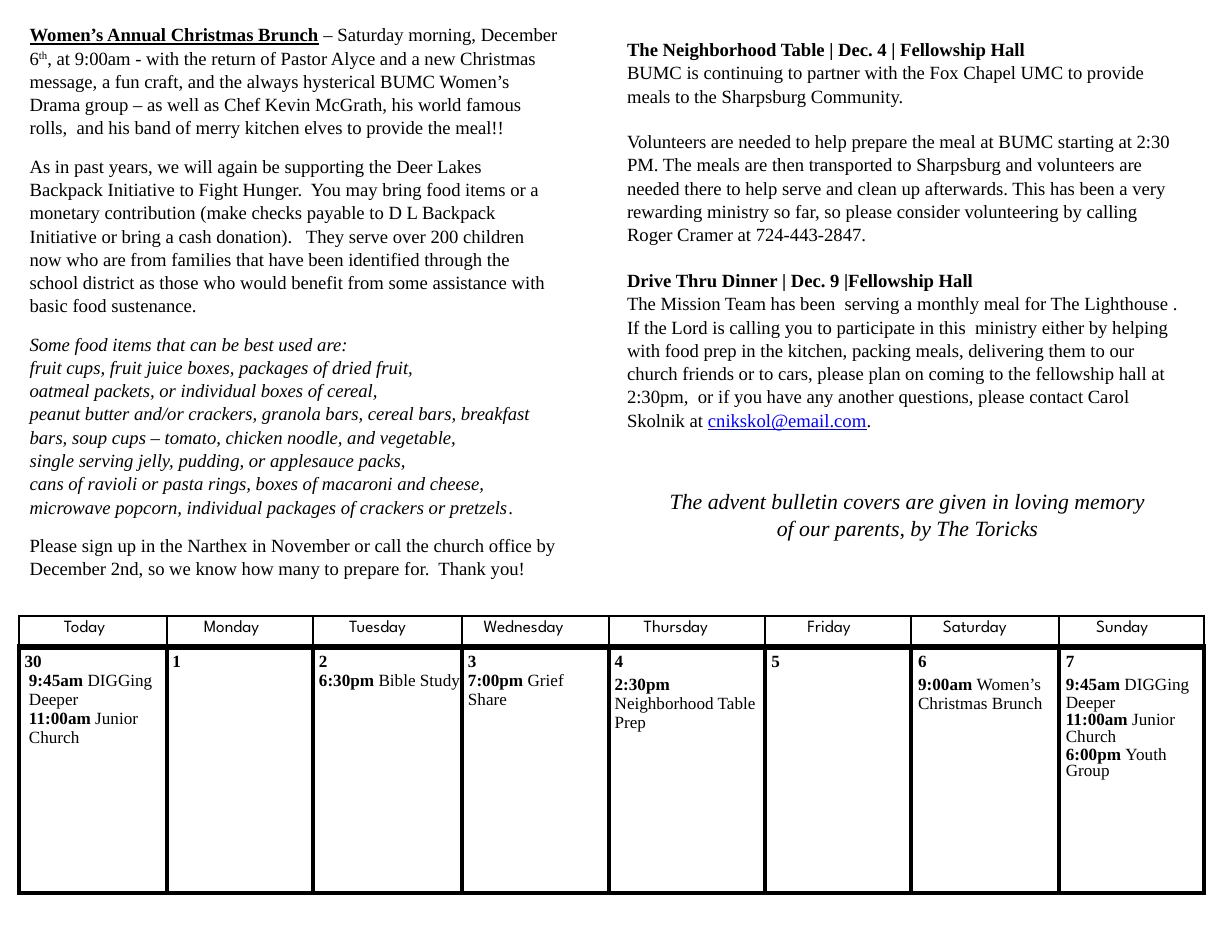
from dataclasses import dataclass

from lxml import etree
from pptx import Presentation
from pptx.dml.color import RGBColor
from pptx.enum.text import MSO_ANCHOR, PP_ALIGN
from pptx.oxml.ns import qn
from pptx.util import Pt

CENTER = PP_ALIGN.CENTER
LEFT = PP_ALIGN.LEFT
TOP = MSO_ANCHOR.TOP


@dataclass(frozen=True)
class Theme:
    ink: str = "000000"
    link: str = "0000FF"
    body_font: str = "Times New Roman"
    header_font: str = "League Spartan"
    body_size: float = 12
    dedication_size: float = 14
    calendar_size: float = 11
    line_spacing: float = 1.04
    thin: float = 1.5
    medium: float = 3
    thick: float = 4.25


THEME = Theme()
BOLD = {"bold": True}
ITALIC = {"italic": True}
HEADING = {"bold": True, "underline": True}
LINK = {"color": THEME.link, "underline": True}
SUPERSCRIPT = {"baseline": 30000}
DEDICATION = {"italic": True, "size": Pt(THEME.dedication_size)}
AFTER_SMALL_GAP = {"space_before": Pt(9.6)}
AFTER_LINE = {"space_before": Pt(14.4)}
TIGHT = {"line_spacing": 0.88}
TIGHT_START = {"line_spacing": 0.88, "space_before": Pt(0.8)}
ENTRY = {"space_before": Pt(2.6)}


class Page:
    def __init__(self, slide, theme):
        self.slide = slide
        self.theme = theme

    def add_run(self, paragraph, text, formats):
        run = paragraph.add_run()
        run.text = text
        values = {"name": self.theme.body_font, "size": Pt(self.theme.body_size),
                  "bold": False, "italic": False, **formats}
        color = values.pop("color", self.theme.ink)
        baseline = values.pop("baseline", None)
        for name, value in values.items():
            setattr(run.font, name, value)
        run.font.color.rgb = RGBColor.from_string(color)
        if baseline:
            run._r.get_or_add_rPr().set("baseline", str(baseline))

    def fill_text(self, text_frame, paragraphs, base=None, layout=None):
        for index, (runs, own_layout) in enumerate(paragraphs):
            paragraph = text_frame.paragraphs[0] if index == 0 else text_frame.add_paragraph()
            values = {"alignment": LEFT, "space_before": Pt(0), **(layout or {}), **own_layout}
            indent = values.pop("indent", 0)
            for name, value in values.items():
                setattr(paragraph, name, value)
            paragraph._p.get_or_add_pPr().set("marL", str(Pt(indent)))
            for text, formats in runs:
                self.add_run(paragraph, text, {**(base or {}), **formats})

    def text_box(self, left, top, width, height, paragraphs):
        shape = self.slide.shapes.add_textbox(Pt(left), Pt(top), Pt(width), Pt(height))
        shape.text_frame.word_wrap = True
        self.fill_text(shape.text_frame, paragraphs,
                       layout={"line_spacing": self.theme.line_spacing})

    def border(self, cell, widths):
        properties = cell._tc.get_or_add_tcPr()
        for side, width in zip(("lnL", "lnR", "lnT", "lnB"), widths):
            line = etree.SubElement(properties, qn(f"a:{side}"), w=str(Pt(width)))
            fill = etree.SubElement(line, qn("a:solidFill"))
            etree.SubElement(fill, qn("a:srgbClr"), val=self.theme.ink)

    def calendar(self, left, top, row_heights, week):
        theme = self.theme
        column_widths = [day[1] for day in week]
        frame = self.slide.shapes.add_table(
            len(row_heights), len(week), Pt(left), Pt(top),
            Pt(sum(column_widths)), Pt(sum(row_heights)))
        table = frame.table
        table.first_row = table.horz_banding = False
        for row, height in zip(table.rows, row_heights):
            row.height = Pt(height)
        header_borders = (theme.thin, theme.thin, theme.thin, theme.thick)
        body_borders = (theme.medium, theme.medium, theme.thick, theme.medium)
        for column, (day, width, day_indent, body_indent, entries) in enumerate(week):
            table.columns[column].width = Pt(width)
            title = [([(day, {})], {"space_before": Pt(2.8)})]
            contents = (
                (title, theme.header_font, day_indent, header_borders),
                (entries, theme.body_font, body_indent, body_borders),
            )
            for row, (paragraphs, font, indent, borders) in enumerate(contents):
                cell = table.cell(row, column)
                margins = {"margin_left": 0, "margin_right": 0, "margin_top": Pt(2.9),
                           "margin_bottom": 0, "vertical_anchor": TOP}
                for name, value in margins.items():
                    setattr(cell, name, value)
                self.border(cell, borders)
                cell.fill.background()
                self.fill_text(cell.text_frame, paragraphs,
                               {"name": font, "size": Pt(theme.calendar_size)},
                               {"indent": indent})


def plain(text, formats=None, layout=None):
    return [(text, formats or {})], layout or {}


def event(time, text, layout=None):
    return [(time + " ", BOLD), (text, {})], layout or {}


BRUNCH = [
    ([("Women’s Annual Christmas Brunch", HEADING),
      (" – Saturday morning, December 6", {}),
      ("th", SUPERSCRIPT),
      (", at 9:00am - with the return of Pastor Alyce and a new Christmas message, a fun craft, "
       "and the always hysterical BUMC Women’s Drama group – as well as Chef Kevin McGrath, his "
       "world famous rolls,  and his band of merry kitchen elves to provide the meal!!", {})], {}),
    plain("As in past years, we will again be supporting the Deer Lakes Backpack Initiative to "
          "Fight Hunger.  You may bring food items or a monetary contribution (make checks payable "
          "to D L Backpack Initiative or bring a cash donation).   They serve over 200 children "
          "now who are from families that have been identified through the school district as "
          "those who would benefit from some assistance with basic food sustenance.",
          layout=AFTER_SMALL_GAP),
    plain("Some food items that can be best used are:", ITALIC, AFTER_SMALL_GAP),
    *[plain(line, ITALIC) for line in (
        "fruit cups, fruit juice boxes, packages of dried fruit,",
        "oatmeal packets, or individual boxes of cereal,",
        "peanut butter and/or crackers, granola bars, cereal bars, breakfast bars, "
        "soup cups – tomato, chicken noodle, and vegetable,",
        "single serving jelly, pudding, or applesauce packs,",
        "cans of ravioli or pasta rings, boxes of macaroni and cheese,")],
    ([("microwave popcorn, individual packages of crackers or pretzels", ITALIC), (".", {})], {}),
    plain("Please sign up in the Narthex in November or call the church office by December 2nd, "
          "so we know how many to prepare for.  Thank you!", layout=AFTER_SMALL_GAP),
]

MEALS = [
    plain("The Neighborhood Table | Dec. 4 | Fellowship Hall", BOLD),
    plain("BUMC is continuing to partner with the Fox Chapel UMC to provide meals to the "
          "Sharpsburg Community."),
    plain("Volunteers are needed to help prepare the meal at BUMC starting at 2:30 PM. The meals "
          "are then transported to Sharpsburg and volunteers are  needed there to help serve and "
          "clean up afterwards. This has been a very rewarding ministry so far, so please consider "
          "volunteering by calling Roger Cramer at 724-443-2847.", layout=AFTER_LINE),
    plain("Drive Thru Dinner | Dec. 9 |Fellowship Hall", BOLD, AFTER_LINE),
    ([("The Mission Team has been  serving a monthly meal for The Lighthouse . If the Lord is "
       "calling you to participate in this  ministry either by helping with food prep in the "
       "kitchen, packing meals, delivering them to our church friends or to cars, please plan on "
       "coming to the fellowship hall at 2:30pm,  or if you have any another questions, please "
       "contact Carol Skolnik at ", {}),
      ("cnikskol@email.com", LINK), (".", {})], {}),
    plain("The advent bulletin covers are given in loving memory", DEDICATION,
          {"alignment": CENTER, "space_before": Pt(36)}),
    plain("of our parents, by The Toricks", DEDICATION, {"alignment": CENTER}),
]

INSET = {"indent": 6.4}
WEEK = [
    ("Today", 95, 28.8, 3.6, [
        plain("30", BOLD), event("9:45am", "DIGGing", INSET), plain("Deeper", layout=INSET),
        event("11:00am", "Junior", INSET), plain("Church", layout=INSET)]),
    ("Monday", 94.3, 23.8, 3.6, [plain("1", BOLD)]),
    ("Tuesday", 95.8, 23, 3.6, [plain("2", BOLD), event("6:30pm", "Bible Study")]),
    ("Wednesday", 94.3, 13.7, 3.6, [
        plain("3", BOLD), event("7:00pm", "Grief"),
        plain("Share", layout={"line_spacing": Pt(12.4)})]),
    ("Thursday", 100.1, 22.3, 3.6, [
        plain("4", BOLD), event("2:30pm", "Neighborhood Table Prep", ENTRY)]),
    ("Friday", 94.3, 27.4, 4.3, [plain("5", BOLD)]),
    ("Saturday", 95, 20.2, 4.3, [
        plain("6", BOLD), event("9:00am", "Women’s Christmas Brunch", ENTRY)]),
    ("Sunday", 92.9, 23.8, 4.3, [
        plain("7", BOLD), event("9:45am", "DIGGing", ENTRY), plain("Deeper", layout=TIGHT_START),
        event("11:00am", "Junior", TIGHT), plain("Church", layout=TIGHT),
        event("6:00pm", "Youth", TIGHT_START), plain("Group", layout=TIGHT)]),
]


def main():
    presentation = Presentation()
    presentation.slide_width = Pt(792)
    presentation.slide_height = Pt(612)
    slide = presentation.slides.add_slide(presentation.slide_layouts[6])
    page = Page(slide, THEME)
    page.calendar(12.2, 396, (20.2, 157.7), WEEK)
    page.text_box(12, 10.8, 354, 385, BRUNCH)
    page.text_box(396, 20.2, 375, 330, MEALS)
    presentation.save("out.pptx")


if __name__ == "__main__":
    main()
